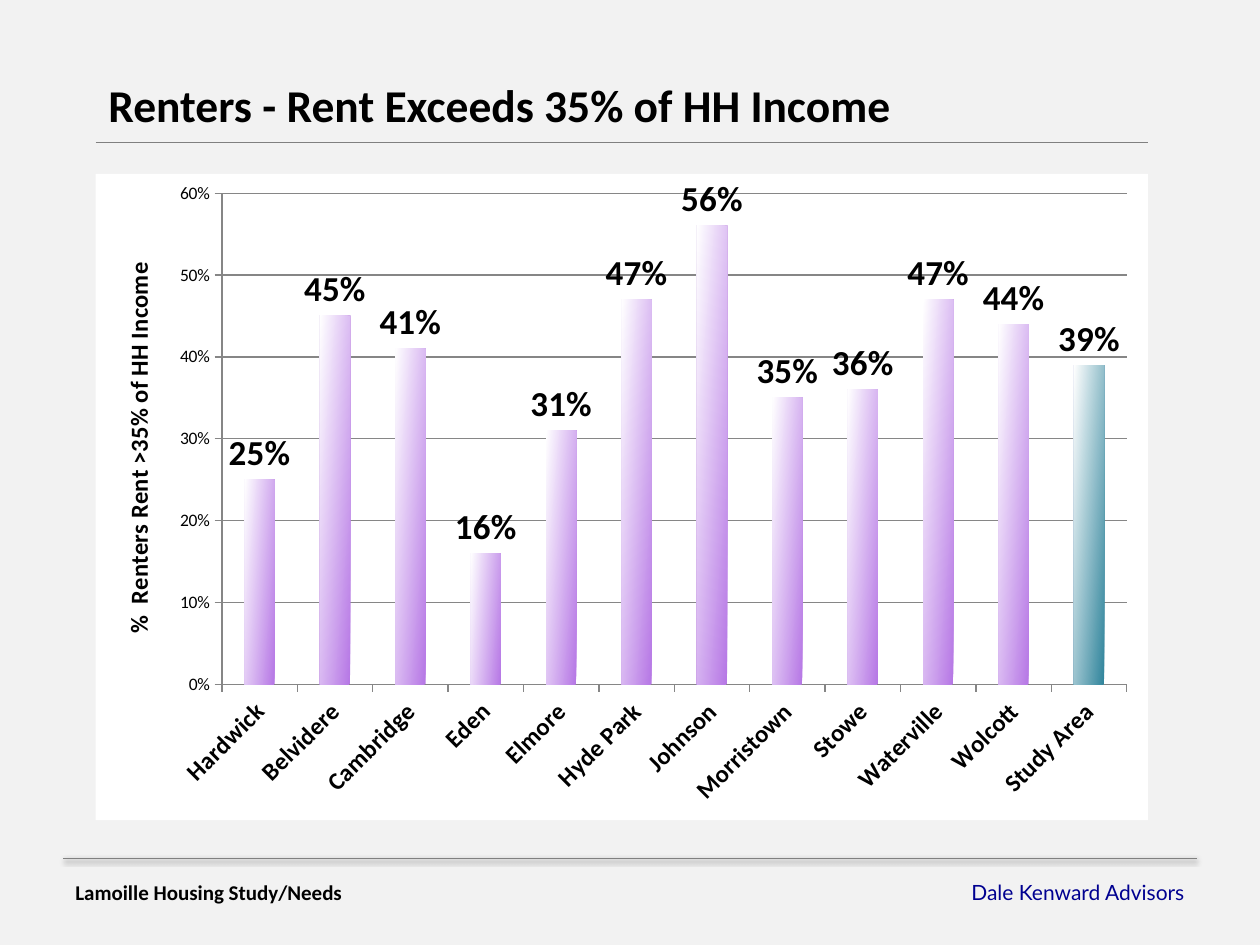
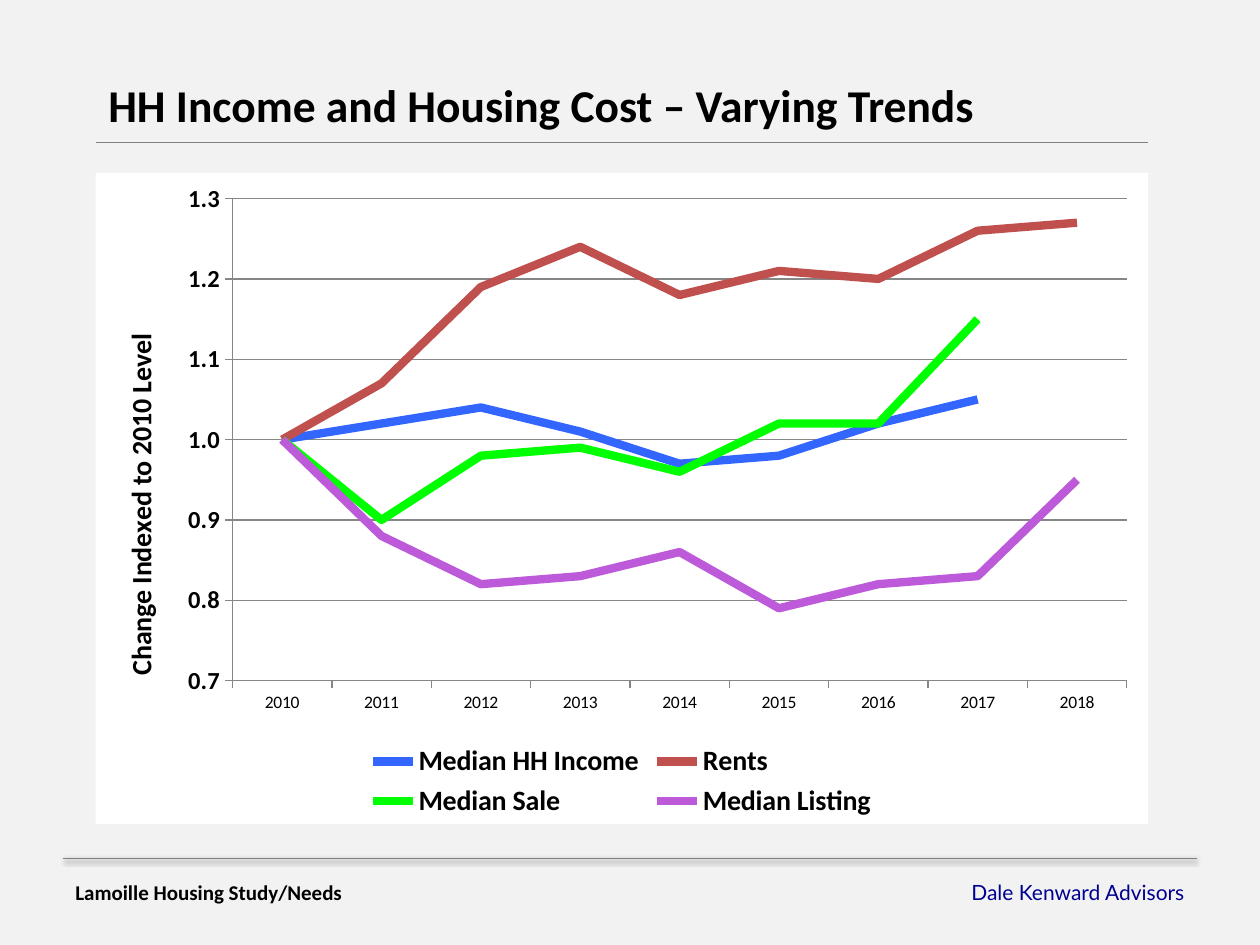
from pptx import Presentation
from pptx.chart.data import CategoryChartData
from pptx.dml.color import RGBColor
from pptx.enum.chart import XL_CHART_TYPE, XL_LABEL_POSITION, XL_LEGEND_POSITION, XL_TICK_MARK
from pptx.enum.shapes import MSO_CONNECTOR
from pptx.enum.text import MSO_ANCHOR, MSO_AUTO_SIZE, PP_ALIGN
from pptx.oxml import parse_xml
from pptx.oxml.ns import nsdecls, qn
from pptx.util import Inches, Pt

COLUMN, LINE = XL_CHART_TYPE.COLUMN_CLUSTERED, XL_CHART_TYPE.LINE
ABOVE, BELOW = XL_LABEL_POSITION.OUTSIDE_END, XL_LEGEND_POSITION.BOTTOM
OUT, NONE = XL_TICK_MARK.OUTSIDE, XL_TICK_MARK.NONE
STRAIGHT = MSO_CONNECTOR.STRAIGHT
TOP, GROW = MSO_ANCHOR.TOP, MSO_AUTO_SIZE.SHAPE_TO_FIT_TEXT
LEFT, RIGHT = PP_ALIGN.LEFT, PP_ALIGN.RIGHT

FONT = "Calibri"
PAPER, WHITE, BLACK = "F2F2F2", "FFFFFF", "000000"
GRAY, NAVY, GRID = "808080", "000090", "868686"
PURPLE, TEAL = "B677E5", "31859C"
EDGE, WIDE = 0.76, 8.35
SHADOW = (
    '<a:outerShdw blurRad="39370" dist="20320" dir="5400000" rotWithShape="0">'
    '<a:srgbClr val="000000"><a:alpha val="38000"/></a:srgbClr></a:outerShdw>'
)

TOWNS = {
    "Hardwick": 0.25, "Belvidere": 0.45, "Cambridge": 0.41, "Eden": 0.16,
    "Elmore": 0.31, "Hyde Park": 0.47, "Johnson": 0.56, "Morristown": 0.35,
    "Stowe": 0.36, "Waterville": 0.47, "Wolcott": 0.44, "Study Area": 0.39,
}
YEARS = [str(year) for year in range(2010, 2019)]
TRENDS = [
    ("Median HH Income", "3366FF", [1, 1.02, 1.04, 1.01, 0.97, 0.98, 1.02, 1.05, None]),
    ("Rents", "C0504D", [1, 1.07, 1.19, 1.24, 1.18, 1.21, 1.2, 1.26, 1.27]),
    ("Median Sale", "00FF00", [1, 0.9, 0.98, 0.99, 0.96, 1.02, 1.02, 1.15, None]),
    ("Median Listing", "BD5AD9", [1, 0.88, 0.82, 0.83, 0.86, 0.79, 0.82, 0.83, 0.95]),
]


def rgb(code):
    return RGBColor.from_string(code)


def style(font, size, bold=False, color=BLACK, name=FONT):
    for key, value in {"size": Pt(size), "bold": bold, "name": name}.items():
        setattr(font, key, value)
    font.color.rgb = rgb(color)


def stroke(line, color, width):
    line.color.rgb = rgb(color)
    line.width = Pt(width)


def rule(slide, left, top, width, weight, effect=""):
    """Draw a level gray line, with an effect in XML if one is given."""
    line = slide.shapes.add_connector(
        STRAIGHT, Inches(left), Inches(top), Inches(left + width), Inches(top))
    stroke(line.line, GRAY, weight)
    line._element.spPr.append(
        parse_xml(f'<a:effectLst {nsdecls("a")}>{effect}</a:effectLst>'))


def write(shape, text, size, align=LEFT, **look):
    frame = shape.text_frame
    frame.text = text
    format = {"word_wrap": True, "auto_size": GROW, "vertical_anchor": TOP}
    for key, value in format.items():
        setattr(frame, key, value)
    frame.paragraphs[0].alignment = align
    style(frame.paragraphs[0].runs[0].font, size, **look)


def note(slide, left, text, **look):
    """Add one footer text."""
    box = slide.shapes.add_textbox(Inches(left), Inches(6.93), Inches(2.96), Inches(0.3))
    write(box, text, 12, **look)


def start(deck, text):
    """Add a slide with its title, rules and footer."""
    slide = deck.slides.add_slide(deck.slide_layouts[5])
    title = slide.shapes.title
    spots = {"left": EDGE, "top": 0.56, "width": 8.65, "height": 0.54}
    for key, value in spots.items():
        setattr(title, key, Inches(value))
    write(title, text, 26, bold=True)
    rule(slide, EDGE, 1.13, WIDE, 1)
    rule(slide, 0.5, 6.81, 9, 0.5, SHADOW)
    note(slide, 6.54, "Dale Kenward Advisors", align=RIGHT, color=NAVY, name="Lato")
    note(slide, 0.5, "Lamoille Housing Study/Needs", bold=True)
    return slide


def place(node, inner=False, **parts):
    """Fix a chart part at shares of the chart's size."""
    modes = '<c:layoutTarget val="inner"/>' if inner else ""
    modes += '<c:xMode val="edge"/><c:yMode val="edge"/>'
    sizes = "".join(f'<c:{key} val="{value}"/>' for key, value in parts.items())
    layout = parse_xml(
        f'<c:layout {nsdecls("c")}><c:manualLayout>{modes}{sizes}</c:manualLayout></c:layout>')
    old = node.find(qn("c:layout"))
    if old is None:
        node.insert(0, layout)
    else:
        node.replace(old, layout)


def plot(slide, kind, cats, rows, top, height, area):
    """Add a chart on a white ground, with its plot at a fixed area."""
    data = CategoryChartData()
    data.categories = cats
    for name, values in rows:
        data.add_series(name, values)
    chart = slide.shapes.add_chart(
        kind, Inches(EDGE), Inches(top), Inches(WIDE), Inches(height), data).chart
    chart.has_title = chart.has_legend = False
    style(chart.font, 10)
    root = chart._chartSpace.find(qn("c:chart"))
    root.addnext(parse_xml(
        f'<c:spPr {nsdecls("c", "a")}><a:solidFill><a:srgbClr val="{WHITE}"/></a:solidFill>'
        '<a:ln><a:noFill/></a:ln></c:spPr>'))
    place(root.find(qn("c:plotArea")), True, **area)
    chart.plots[0].vary_by_categories = False
    return chart


def dress(axis, size, bold):
    axis.major_tick_mark, axis.minor_tick_mark = OUT, NONE
    stroke(axis.format.line, GRID, 0.75)
    style(axis.tick_labels.font, size, bold)


def scale(axis, low, high, code, title, size, y):
    """Set the range, number format, grid and title of a value axis."""
    span = {"minimum_scale": low, "maximum_scale": high, "major_unit": 0.1,
            "has_major_gridlines": True}
    for key, value in span.items():
        setattr(axis, key, value)
    stroke(axis.major_gridlines.format.line, GRID, 0.75)
    labels = axis.tick_labels
    labels.number_format, labels.number_format_is_linked = code, False
    frame = axis.axis_title.text_frame
    frame.text = title
    style(frame.paragraphs[0].runs[0].font, size, True)
    place(axis.axis_title._element, x=0.02, y=y)


def shade(fill, color):
    """Blend from the colour at the right to white at the left."""
    fill.gradient()
    fill.gradient_angle = 175
    for stop, spot, code in zip(fill.gradient_stops, (0, 1), (color, WHITE)):
        stop.position = spot
        stop.color.rgb = rgb(code)


def rents(deck):
    slide = start(deck, "Renters - Rent Exceeds 35% of HH Income")
    area = {"x": 0.12, "y": 0.03, "w": 0.86, "h": 0.76}
    chart = plot(slide, COLUMN, list(TOWNS), [("Series 1", TOWNS.values())],
                 1.38, 5.13, area)
    dress(chart.category_axis, 14, True)
    chart.category_axis._element.txPr.bodyPr.set("rot", "-2700000")
    dress(chart.value_axis, 10, False)
    scale(chart.value_axis, 0, 0.6, "0%", "%  Renters Rent >35% of HH Income", 14, 0.13)
    bars = chart.plots[0]
    bars.gap_width = 150
    series = bars.series[0]
    shade(series.format.fill, PURPLE)
    shade(series.points[len(TOWNS) - 1].format.fill, TEAL)
    labels = series.data_labels
    format = {"show_value": True, "number_format": "0%",
              "number_format_is_linked": False, "position": ABOVE}
    for key, value in format.items():
        setattr(labels, key, value)
    style(labels.font, 20, True)


def trends(deck):
    slide = start(deck, "HH Income and Housing Cost – Varying Trends")
    area = {"x": 0.13, "y": 0.04, "w": 0.85, "h": 0.74}
    rows = [(name, values) for name, _, values in TRENDS]
    chart = plot(slide, LINE, YEARS, rows, 1.37, 5.17, area)
    dress(chart.category_axis, 10, False)
    dress(chart.value_axis, 14, True)
    scale(chart.value_axis, 0.7, 1.3, "0.0", "Change Indexed to 2010 Level", 16, 0.24)
    for series, (_, color, _) in zip(chart.plots[0].series, TRENDS):
        series.smooth = False
        stroke(series.format.line, color, 4.75)
    chart.has_legend = True
    chart.legend.position = BELOW
    chart.legend.include_in_layout = False
    style(chart.legend.font, 16, True)


def main():
    deck = Presentation()
    deck.slide_width, deck.slide_height = Inches(10), Inches(7.5)
    ground = deck.slide_master.background.fill
    ground.solid()
    ground.fore_color.rgb = rgb(PAPER)
    rents(deck)
    trends(deck)
    deck.save("out.pptx")


if __name__ == "__main__":
    main()
